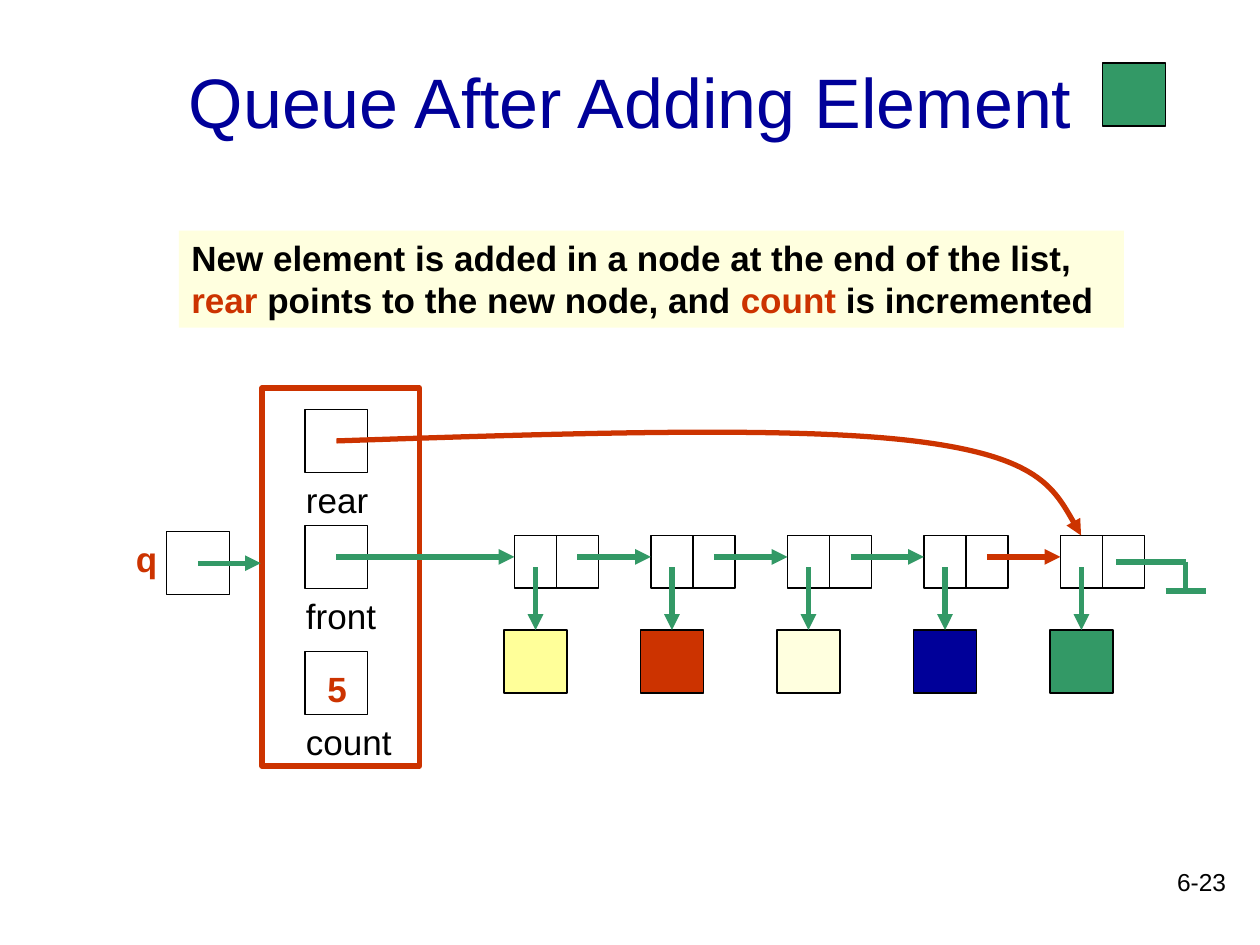
from pptx import Presentation
from pptx.dml.color import RGBColor
from pptx.enum.shapes import MSO_CONNECTOR, MSO_SHAPE
from pptx.enum.text import MSO_ANCHOR, PP_ALIGN
from pptx.oxml.ns import qn
from pptx.util import Inches, Pt
from lxml.etree import SubElement

COLORS = {
    "black": "000000", "navy": "000099", "red": "CC3300", "green": "339966",
    "yellow": "FFFF99", "cream": "FFFFDF",
}
FONT = "Arial"

TITLE = "Queue After Adding Element"
MESSAGE = [
    ("New element is added in a node at the end of the list, ", "black"),
    ("rear", "red"),
    (" points to the new node, and ", "black"),
    ("count", "red"),
    (" is incremented", "black"),
]
FIELDS = [("rear", 3.25, 0.83), ("front", 4.17, 0.83), ("count", 5.17, 0.92)]  # name, top, label width
ELEMENTS = ["yellow", "red", "cream", "navy", "green"]
REAR_CURVE = [(2.67, 3.5), (4.47, 3.44), (6.26, 3.38), (7.25, 3.5),
              (8.24, 3.62), (8.41, 3.94), (8.58, 4.25)]
END_OF_LIST = [((8.86, 4.46), (9.41, 4.46)), ((9.41, 4.46), (9.41, 4.69)),
               ((9.25, 4.69), (9.57, 4.69))]

BOX = 0.5
FIELD_LEFT, FIELD_CENTER = 2.42, 2.67
CELL_WIDTH, CELL_HEIGHT = 1 / 3, 5 / 12
NODE_LEFT, NODE_TOP, NODE_PITCH = 4 + 1 / 12, 4.25, 13 / 12
LINK_Y = 4.42
ELEMENT_TOP = 5


def color(name):
    return RGBColor.from_string(COLORS[name])


def add_rectangle(page, left, top, width, height, fill=None, line="black", weight=0.75):
    shape = page.shapes.add_shape(
        MSO_SHAPE.RECTANGLE, Inches(left), Inches(top), Inches(width), Inches(height))
    shape.shadow.inherit = False
    if fill:
        shape.fill.solid()
        shape.fill.fore_color.rgb = color(fill)
    else:
        shape.fill.background()
    if line:
        shape.line.color.rgb = color(line)
        shape.line.width = Pt(weight)
    else:
        shape.line.fill.background()
    return shape


def write(shape, spans, size=20, bold=False, align=PP_ALIGN.LEFT, anchor=MSO_ANCHOR.TOP):
    """Fill a shape with one paragraph made of (text, colour) spans."""
    frame = shape.text_frame
    frame.word_wrap = True
    frame.vertical_anchor = anchor
    para = frame.paragraphs[0]
    para.alignment = align
    para.font.name, para.font.size, para.font.bold = FONT, Pt(size), bold
    for text, name in spans:
        span = para.add_run()
        span.text = text
        span.font.color.rgb = color(name)


def add_text(page, text, left, top, width, height=0.43, name="black", **style):
    box = page.shapes.add_textbox(Inches(left), Inches(top), Inches(width), Inches(height))
    write(box, [(text, name)], **style)


def style_stroke(shape, name, arrow):
    shape.line.color.rgb = color(name)
    shape.line.width = Pt(3)
    if arrow:
        SubElement(shape.line._get_or_add_ln(), qn("a:tailEnd"), type="triangle")


def add_line(page, start, end, name="green", arrow=True):
    line = page.shapes.add_connector(
        MSO_CONNECTOR.STRAIGHT, *(Inches(value) for value in (*start, *end)))
    style_stroke(line, name, arrow)
    SubElement(line._element.spPr, qn("a:effectLst"))


def add_curve(page, points, name):
    """Draw a Bézier arrow: a start point, then three points per segment."""
    corners = [(Inches(x), Inches(y)) for x, y in points]
    builder = page.shapes.build_freeform(*corners[0])
    builder.add_line_segments(corners[1:], close=False)
    curve = builder.convert_to_shape()
    curve.shadow.inherit = False
    curve.fill.background()
    style_stroke(curve, name, arrow=True)
    steps = list(curve._element.iter(qn("a:lnTo")))
    outline = steps[0].getparent()
    for first in range(0, len(steps), 3):
        bezier = SubElement(outline, qn("a:cubicBezTo"))
        for step in steps[first:first + 3]:
            bezier.append(step[0])
            outline.remove(step)


def add_heading(page):
    title = page.shapes.title
    title.left, title.top = Inches(0.75), Inches(0.17)
    title.width, title.height = Inches(8.5), Inches(1.25)
    write(title, [(TITLE, "navy")], size=40, align=PP_ALIGN.CENTER, anchor=MSO_ANCHOR.MIDDLE)
    add_rectangle(page, 8.75, 0.5, BOX, BOX, fill="green")
    message = add_rectangle(page, 1.42, 1.83, 7.5, 0.77, fill="cream", line=None)
    write(message, MESSAGE, bold=True)


def add_queue(page):
    add_rectangle(page, 2.08, 3.08, 1.25, 3, line="red", weight=3)
    for name, top, width in FIELDS:
        add_rectangle(page, FIELD_LEFT, top, BOX, BOX)
        add_text(page, name, 2.33, top + BOX, width)
    add_text(page, "5", 2.5, 5.25, 0.39, name="red", bold=True)
    add_text(page, "q", 0.98, 4.22, 0.5, name="red", bold=True)
    add_rectangle(page, 1.32, 4.22, BOX, BOX)
    add_line(page, (1.57, 4.47), (2.07, 4.47))


def add_list(page):
    link_start = FIELD_CENTER
    for index, fill in enumerate(ELEMENTS):
        left = NODE_LEFT + index * NODE_PITCH
        center = left + CELL_WIDTH / 2
        for cell_left in (left, left + CELL_WIDTH):
            add_rectangle(page, cell_left, NODE_TOP, CELL_WIDTH, CELL_HEIGHT)
        add_rectangle(page, center - BOX / 2, ELEMENT_TOP, BOX, BOX, fill=fill)
        add_line(page, (center, 4.5), (center, ELEMENT_TOP))
        is_new = index == len(ELEMENTS) - 1
        add_line(page, (link_start, LINK_Y), (left, LINK_Y), "red" if is_new else "green")
        link_start = center + CELL_WIDTH
    add_curve(page, REAR_CURVE, "red")
    for start, end in END_OF_LIST:
        add_line(page, start, end, arrow=False)


def main():
    deck = Presentation()
    deck.slide_width, deck.slide_height = Inches(10), Inches(7.5)
    page = deck.slides.add_slide(deck.slide_layouts.get_by_name("Title Only"))
    add_heading(page)
    add_queue(page)
    add_list(page)
    add_text(page, "6-23", 7.75, 6.83, 2.08, 0.5, size=14, align=PP_ALIGN.RIGHT)
    deck.save("out.pptx")


if __name__ == "__main__":
    main()
